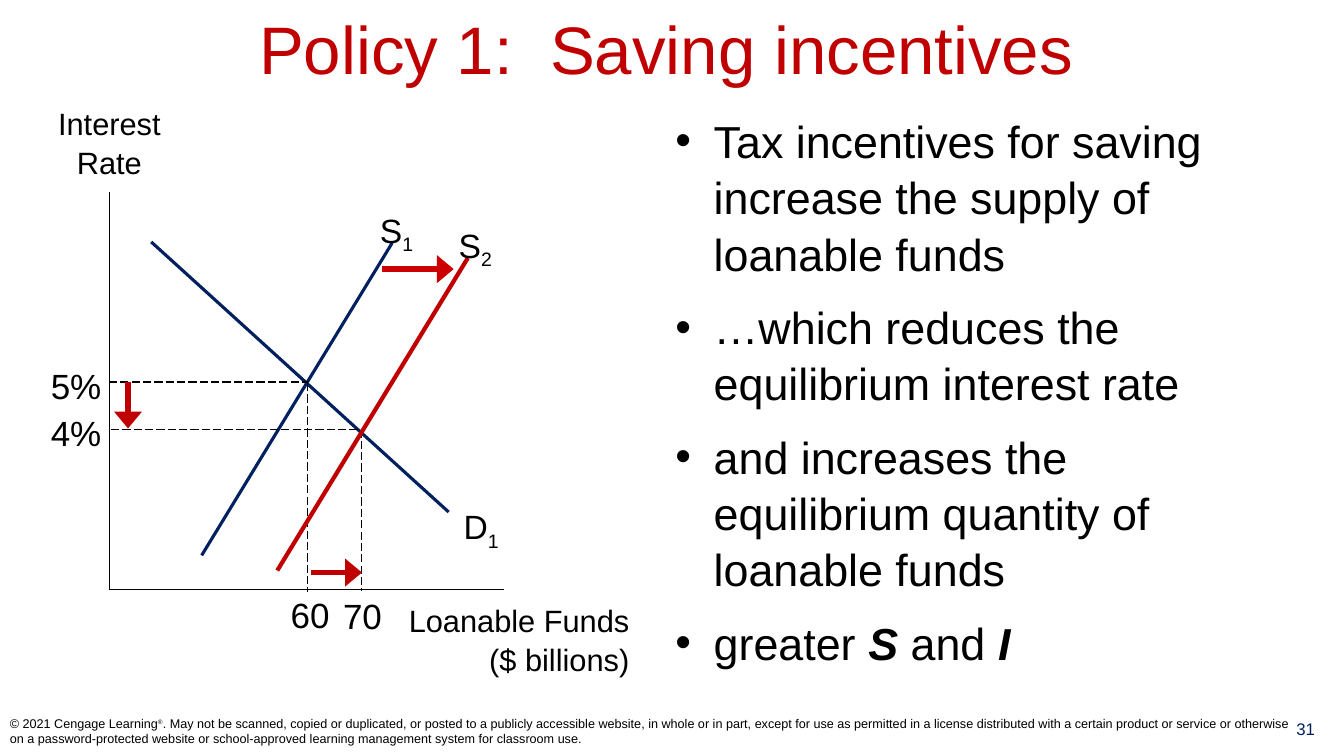
"""Build the slide on saving incentives, with its loanable funds diagram."""
from lxml import etree
from pptx import Presentation
from pptx import util as u
from pptx.dml.color import RGBColor
from pptx.enum import dml, shapes, text
from pptx.oxml import ns

BLACK = RGBColor(0x00, 0x00, 0x00)
NAVY = RGBColor(0x00, 0x20, 0x60)
RED = RGBColor(0xC0, 0x00, 0x00)
BRIGHT_RED = RGBColor(0xCC, 0x00, 0x00)
LEFT, CENTER, RIGHT = text.PP_ALIGN.LEFT, text.PP_ALIGN.CENTER, text.PP_ALIGN.RIGHT

prs = Presentation()
prs.slide_width, prs.slide_height = u.Inches(13.33), u.Inches(7.5)
CELL = prs.slide_height / 75
s = prs.slides.add_slide(prs.slide_layouts[5])


def write(p, runs, size, color=BLACK, align=LEFT, spacing=1.0):
    """Fill a paragraph with (text, baseline, emphasis) runs."""
    p.alignment, p.line_spacing = align, spacing
    for words, baseline, emphasis in runs:
        if words == "\n":
            p.add_line_break()
            continue
        r = p.add_run()
        r.text = words
        r.font.name, r.font.size = "Arial", u.Pt(size)
        r.font.color.rgb = color
        r.font.bold = r.font.italic = emphasis
        if baseline:
            r.font._element.set("baseline", str(baseline * 1000))


def box(col, row, cols, rows, inset=1):
    """Add a wrapping text box on the grid and return its text frame."""
    sp = s.shapes.add_textbox(*(round(n * CELL) for n in (col, row, cols, rows)))
    tf = sp.text_frame
    tf.word_wrap = True
    tf.margin_left = tf.margin_right = round(inset * CELL)
    return tf


title = s.shapes.title
title.left, title.top, title.width, title.height = (
    round(n * CELL) for n in (1.1, 1.1, 130, 7.2))
tf = title.text_frame
tf.word_wrap = False
tf.vertical_anchor = text.MSO_ANCHOR.MIDDLE
write(tf.paragraphs[0], [("Policy 1:  Saving incentives", 0, False)], 48, RED, CENTER)

points = [
    [("Tax incentives for saving increase the supply of loanable funds", 0, False)],
    [("…which reduces the equilibrium interest rate", 0, False)],
    [("and increases the equilibrium quantity of loanable funds", 0, False)],
    [("greater ", 0, False), ("S", 0, True), (" and ", 0, False), ("I", 0, True)],
]
tf = box(66, 10.5, 63.1, 59.4)
for i, runs in enumerate(points):
    p = tf.add_paragraph() if i else tf.paragraphs[0]
    pPr = p._p.get_or_add_pPr()
    pPr.set("marL", str(u.Inches(0.38)))
    pPr.set("indent", str(-u.Inches(0.38)))
    etree.SubElement(pPr, ns.qn("a:buFont")).set("typeface", "Arial")
    etree.SubElement(pPr, ns.qn("a:buChar")).set("char", "•")
    p.space_before, p.space_after = u.Pt(6 if i else 0), u.Pt(6)
    write(p, runs, 32, spacing=1.05)

axis, guide = (BLACK, 0.75, False, False), (BLACK, 0.75, True, False)
curve, shifted = (NAVY, 2.25, False, False), (RED, 3, False, False)
shift, change = (BRIGHT_RED, 4, False, True), (RED, 4, False, True)
strokes = [
    (10.9, 19, 10.9, 58.5, axis),
    (10.8, 58.5, 50, 58.5, axis),
    (15, 24, 44.5, 50.8, curve),
    (20, 55.1, 38.9, 24.1, curve),
    (10.8, 37.9, 30.5, 37.9, guide),
    (30.5, 38, 30.5, 58.7, guide),
    (11, 42.6, 35.6, 42.6, guide),
    (35.9, 42.6, 35.9, 58.6, guide),
    (27.5, 56.6, 46.4, 25.6, shifted),
    (37.9, 26.7, 45, 26.7, shift),
    (12.7, 37.9, 12.7, 42.5, change),
    (30.8, 56.8, 35.9, 56.8, change),
]
for *ends, (color, width, dashed, arrow) in strokes:
    line = s.shapes.add_connector(
        shapes.MSO_CONNECTOR.STRAIGHT, *(round(n * CELL) for n in ends))
    line.line.color.rgb, line.line.width = color, u.Pt(width)
    if dashed:
        line.line.dash_style = dml.MSO_LINE.LONG_DASH
    if arrow:
        head = etree.SubElement(line.line._get_or_add_ln(), ns.qn("a:tailEnd"))
        head.set("type", "triangle")
        head.set("w", "lg")
        head.set("len", "med")
    etree.SubElement(line._element.spPr, ns.qn("a:effectLst"))

axis_titles = [
    (3.3, 9.7, 15.1, ["Interest", "\n", "Rate"], CENTER),
    (37.2, 59, 26.2, ["Loanable Funds ($ billions)"], RIGHT),
]
for col, row, cols, words, align in axis_titles:
    tf = box(col, row, cols, 8.3)
    write(tf.paragraphs[0], [(w, 0, False) for w in words], 22, align=align, spacing=1.05)

for col, row, letter, index in [
        (45, 49.5, "D", "1"), (36.7, 20.1, "S", "1"), (44.5, 21.6, "S", "2")]:
    tf = box(col, row, 6.1, 5)
    write(tf.paragraphs[0], [(letter, 0, False), (index, -25, False)], 24, spacing=1.05)

for col, row, value in [
        (4.2, 35.5, "5%"), (4.2, 40.1, "4%"), (27.4, 58.2, "60"), (32.6, 58.3, "70")]:
    tf = box(col, row, 6.7, 5.2, inset=0)
    write(tf.paragraphs[0], [(value, 0, False)], 25, align=CENTER, spacing=1.05)

tf = box(0, 70, 129.2, 5)
tf.vertical_anchor = text.MSO_ANCHOR.MIDDLE
p = tf.paragraphs[0]
write(p, [("© 2021 Cengage Learning", 0, False)], 9)
write(p, [("®", 30, False)], 8)
write(p, [(
    ". May not be scanned, copied or duplicated, or posted to a publicly accessible "
    "website, in whole or in part, except for use as permitted in a license distributed "
    "with a certain product or service or otherwise on a password-protected website or "
    "school-approved learning management system for classroom use.", 0, False)], 9)

tf = box(125.7, 70.8, 7.6, 4.1)
write(tf.paragraphs[0], [("31", 0, False)], 12, NAVY, CENTER)

prs.save("out.pptx")
